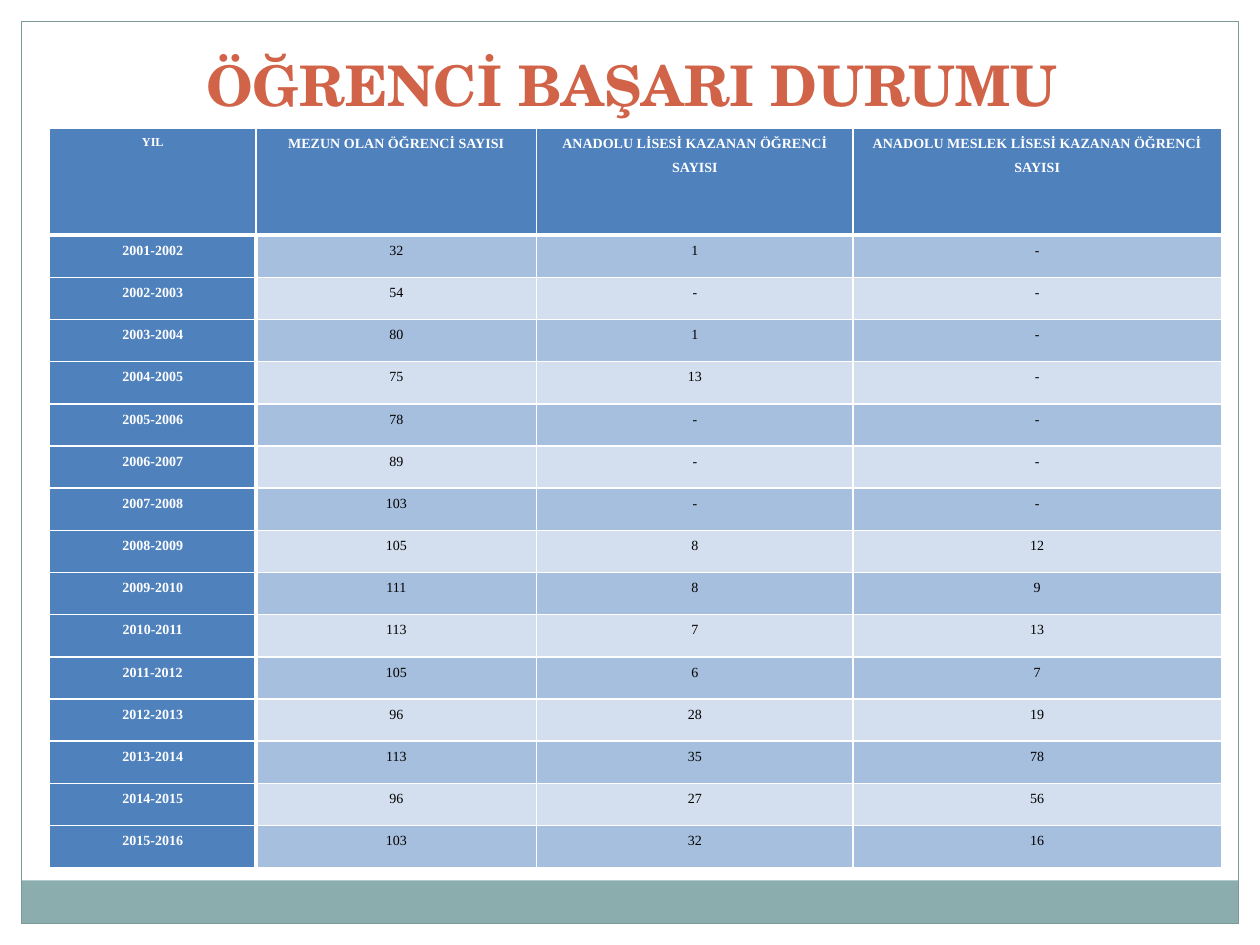
import pptx
import pptx.dml.color
import pptx.enum.shapes
import pptx.enum.text
import pptx.oxml
import pptx.oxml.ns
import pptx.util

Cm = pptx.util.Cm
Pt = pptx.util.Pt
RGB = pptx.dml.color.RGBColor
CENTER = pptx.enum.text.PP_ALIGN.CENTER
MIDDLE = pptx.enum.text.MSO_ANCHOR.MIDDLE

WHITE = RGB(0xFF, 0xFF, 0xFF)
BLACK = RGB(0x00, 0x00, 0x00)
TEAL = RGB(0x8C, 0xAD, 0xAE)
GREY = RGB(0x7C, 0x99, 0x9A)
RUST = RGB(0xD1, 0x63, 0x49)
BLUE = RGB(0x4F, 0x81, 0xBD)
BANDS = [RGB(0xD3, 0xDF, 0xEE), RGB(0xA7, 0xBF, 0xDE)]

WIDE, HIGH, EDGE = 25.4, 19.05, 0.43
COLS = [4.16, 5.66, 6.38, 7.42]
HEAD_H, ROW_H = 2.15, 0.85
HEADS = [
    "YIL",
    "MEZUN OLAN ÖĞRENCİ SAYISI",
    "ANADOLU LİSESİ KAZANAN ÖĞRENCİ SAYISI",
    "ANADOLU MESLEK LİSESİ KAZANAN ÖĞRENCİ SAYISI",
]
START = 2001
COUNTS = [
    (32, 1, "-"),
    (54, "-", "-"),
    (80, 1, "-"),
    (75, 13, "-"),
    (78, "-", "-"),
    (89, "-", "-"),
    (103, "-", "-"),
    (105, 8, 12),
    (111, 8, 9),
    (113, 7, 13),
    (105, 6, 7),
    (96, 28, 19),
    (113, 35, 78),
    (96, 27, 56),
    (103, 32, 16),
]


def add_rect(slide, box, fill=None, line=None):
    kind = pptx.enum.shapes.MSO_SHAPE.RECTANGLE
    rect = slide.shapes.add_shape(kind, *map(Cm, box))
    rect.shadow.inherit = False
    if fill is None:
        rect.fill.background()
    else:
        rect.fill.solid()
        rect.fill.fore_color.rgb = fill
    if line is None:
        rect.line.fill.background()
    else:
        rect.line.color.rgb = line
        rect.line.width = Pt(0.75)


def add_frame(slide):
    inner = WIDE - 2 * EDGE
    add_rect(slide, (0, 0, WIDE, EDGE), WHITE)
    for left in (WIDE - EDGE, 0):
        add_rect(slide, (left, 0, EDGE, HIGH), WHITE)
    add_rect(slide, (EDGE, 17.75, inner, 0.86), TEAL)
    add_rect(slide, (EDGE, EDGE, inner, HIGH - 2 * EDGE), line=GREY)


def style_text(frame, font, size, color, bold):
    para = frame.paragraphs[0]
    para.alignment = CENTER
    for run in para.runs:
        run.font.name = font
        run.font.size = Pt(size)
        run.font.bold = bold
        run.font.color.rgb = color
    return para


def set_title(slide, text):
    title = slide.shapes.title
    title.left, title.top = Cm(0.89), Cm(0.64)
    title.width, title.height = Cm(23.7), Cm(2.1)
    frame = title.text_frame
    frame.text = text
    frame.vertical_anchor = MIDDLE
    style_text(frame, "TeX Gyre Schola", 32, RUST, True)


def set_edge(cell, side, width):
    """Draw a white border on side L, R, T or B; call before filling."""
    props = cell._tc.get_or_add_tcPr()
    props.append(pptx.oxml.parse_xml(
        f'<a:ln{side} {pptx.oxml.ns.nsdecls("a")} w="{Pt(width)}">'
        f'<a:solidFill><a:srgbClr val="{WHITE}"/></a:solidFill></a:ln{side}>'
    ))


def set_cell(cell, text, row, col):
    label = row == 0 or col == 0
    thick = {
        "L": row > 0 and col == 1,
        "R": row > 0 and col == 0,
        "T": row == 1,
        "B": row == 0,
    }
    for side, heavy in thick.items():
        set_edge(cell, side, 3 if heavy else 1)
    cell.fill.solid()
    cell.fill.fore_color.rgb = BLUE if label else BANDS[row % 2]
    cell.margin_left = cell.margin_right = Cm(0.13)
    cell.margin_top = cell.margin_bottom = 0
    cell.text_frame.text = str(text)
    size = 7 if row == col == 0 else 8
    para = style_text(cell.text_frame, "Times New Roman", size,
                      WHITE if label else BLACK, label)
    para.line_spacing = 1.5
    para.space_before = para.space_after = Pt(3)


def add_grid(slide):
    years = range(START, START + len(COUNTS))
    rows = [HEADS]
    rows += [(f"{y}-{y + 1}", *nums) for y, nums in zip(years, COUNTS)]
    high = HEAD_H + ROW_H * len(COUNTS)
    table = slide.shapes.add_table(
        len(rows), len(COLS), Cm(1), Cm(2.59), Cm(sum(COLS)), Cm(high)
    ).table
    for col, width in zip(table.columns, COLS):
        col.width = Cm(width)
    for r, texts in enumerate(rows):
        table.rows[r].height = Cm(ROW_H if r else HEAD_H)
        for c, text in enumerate(texts):
            set_cell(table.cell(r, c), text, r, c)


def main():
    deck = pptx.Presentation()
    deck.slide_width, deck.slide_height = Cm(WIDE), Cm(HIGH)
    slide = deck.slides.add_slide(deck.slide_layouts[5])
    add_frame(slide)
    set_title(slide, "ÖĞRENCİ BAŞARI DURUMU")
    add_grid(slide)
    deck.save("out.pptx")


if __name__ == "__main__":
    main()
